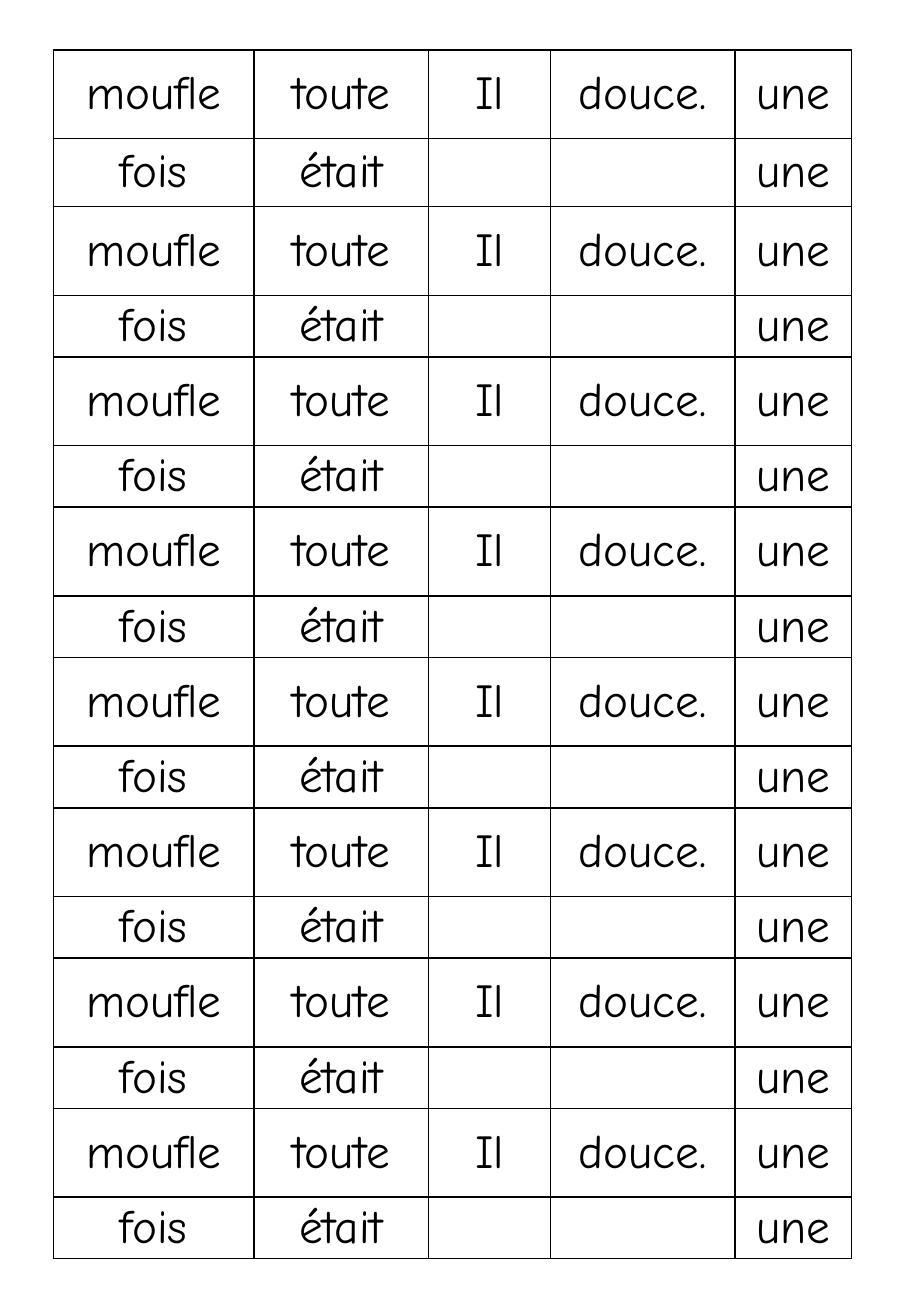
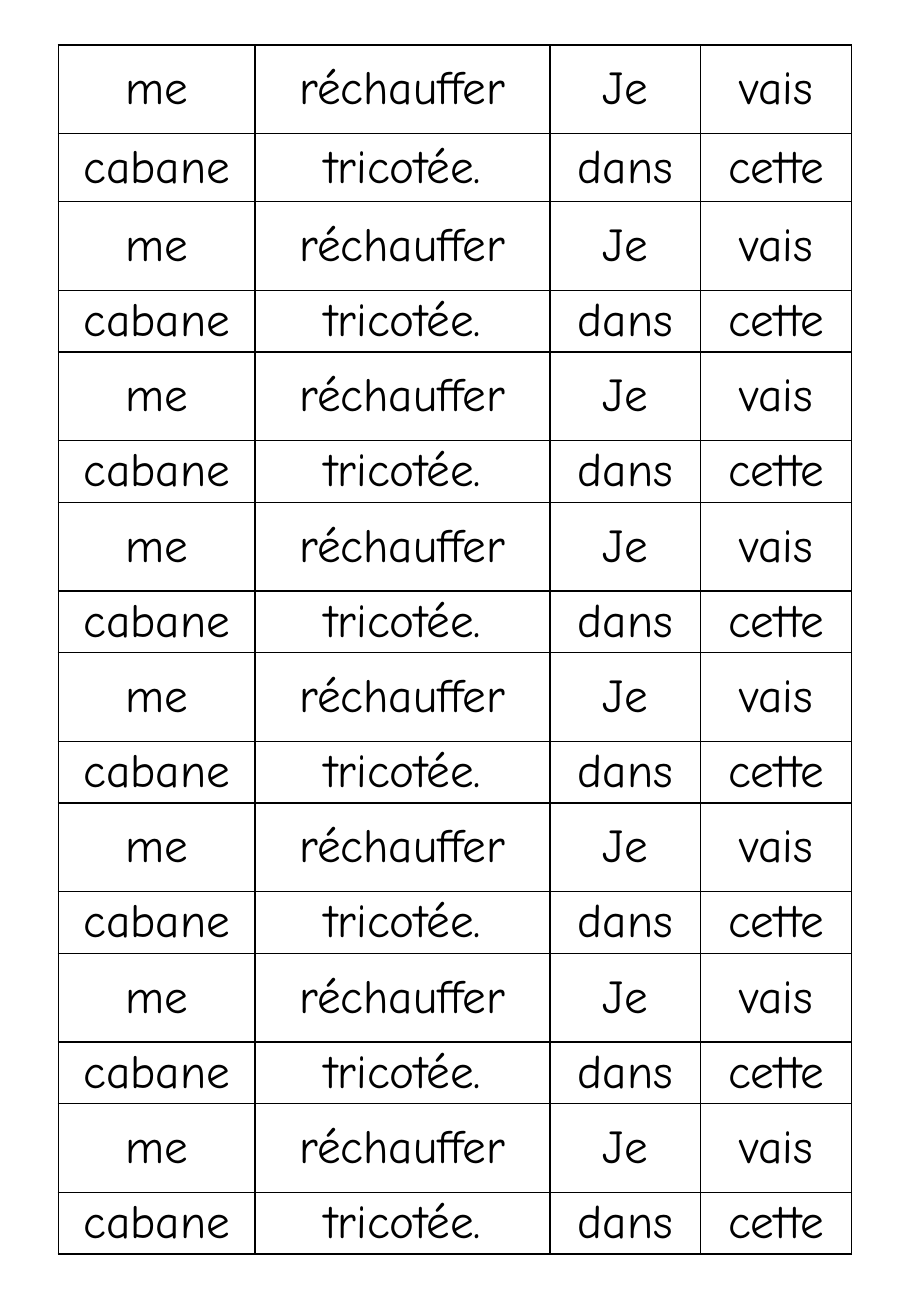
import pptx
import pptx.dml.color
import pptx.enum.text
import pptx.oxml
import pptx.oxml.ns
import pptx.util

SCALE = 9144
FONT = "Comic Neue"
BLACK = "000000"
ROUNDS = 8
TALL, FIRST, SHORT = 73, 56, 48
HEIGHT = 1005


def px(count):
    """Turn px, at 100 to the inch, into EMU."""
    return pptx.util.Emu(count * SCALE)


def color(code):
    """Turn a hex string into a colour."""
    return pptx.dml.color.RGBColor.from_string(code)


def write(cell, text, size=28, font=FONT, ink=BLACK):
    """Put centred, formatted text in a cell."""
    para = cell.text_frame.paragraphs[0]
    para.alignment = pptx.enum.text.PP_ALIGN.CENTER
    run = para.add_run()
    run.text = text
    run.font.size = pptx.util.Pt(size)
    run.font.name = font
    run.font.color.rgb = color(ink)


def frame(cell, ink=BLACK, width=1):
    """Draw the four borders of a cell and clear its fill."""
    props = cell._tc.get_or_add_tcPr()
    space = pptx.oxml.ns.nsdecls("a")
    for side in "LRTB":
        props.append(pptx.oxml.parse_xml(
            f'<a:ln{side} {space} w="{pptx.util.Pt(width)}"><a:solidFill>'
            f'<a:srgbClr val="{ink}"/></a:solidFill></a:ln{side}>'))
    cell.fill.background()


def style(cell):
    """Set the margins, anchor and borders of a cell."""
    cell.margin_left = cell.margin_right = px(5)
    cell.margin_top = cell.margin_bottom = px(3)
    cell.vertical_anchor = pptx.enum.text.MSO_ANCHOR.MIDDLE
    frame(cell)


def labels(slide, left, top, widths, pair):
    """Build a table of word labels that repeats a pair of rows."""
    rows = pair * ROUNDS
    shape = slide.shapes.add_table(
        len(rows), len(widths), px(left), px(top), px(sum(widths)), px(HEIGHT))
    table = shape.table
    table.first_row = table.horz_banding = False
    for column, width in zip(table.columns, widths):
        column.width = px(width)
    heights = [TALL, FIRST] + [TALL, SHORT] * (ROUNDS - 1)
    for row, height, words in zip(table.rows, heights, rows):
        row.height = px(height)
        for cell, word in zip(row.cells, words):
            style(cell)
            if word:
                write(cell, word)
    shape.height = px(HEIGHT)


def main():
    """Build both slides and save them."""
    deck = pptx.Presentation()
    deck.slide_width, deck.slide_height = px(750), px(1083)
    sheets = [
        (44, 41, [165, 144, 100, 152, 96],
         [["moufle", "toute", "Il", "douce.", "une"],
          ["fois", "était", "", "", "une"]]),
        (48, 37, [162, 243, 124, 124],
         [["me", "réchauffer", "Je", "vais"],
          ["cabane", "tricotée.", "dans", "cette"]]),
    ]
    for sheet in sheets:
        labels(deck.slides.add_slide(deck.slide_layouts[6]), *sheet)
    deck.save("out.pptx")


if __name__ == "__main__":
    main()
